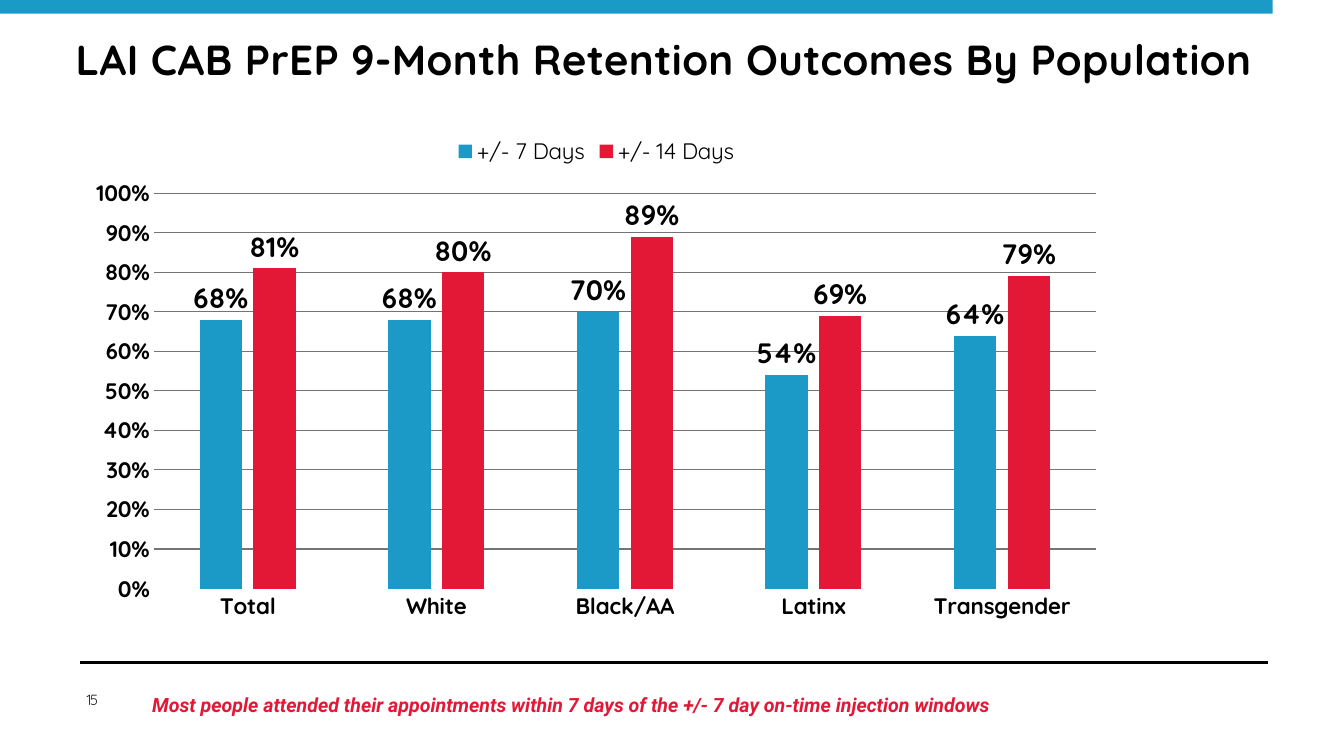
from lxml.etree import SubElement
from pptx import Presentation
from pptx.chart.data import CategoryChartData
from pptx.dml.color import RGBColor
from pptx.enum.chart import (XL_CHART_TYPE, XL_LABEL_POSITION,
                             XL_LEGEND_POSITION, XL_TICK_MARK)
from pptx.enum.shapes import MSO_CONNECTOR, MSO_SHAPE
from pptx.enum.text import MSO_ANCHOR, MSO_AUTO_SIZE, PP_ALIGN
from pptx.oxml.ns import qn
from pptx.util import Emu, Pt

SCALE = 9525  # EMU in one px
HEX = {"bar": "1A9AC7", "blue": "1B9AC7", "red": "E31836", "black": "000000",
       "dark": "1F1F1F", "grid": "747474", "white": "FFFFFF"}
HEAD = "Quicksand"
GROUPS = ["Total", "White", "Black/AA", "Latinx", "Transgender"]
RATES = [("+/- 7 Days", "blue", [0.68, 0.68, 0.7, 0.54, 0.64]),
         ("+/- 14 Days", "red", [0.81, 0.8, 0.89, 0.69, 0.79])]


def px(*nums):
    return [Emu(n * SCALE) for n in nums]


def tint(name):
    return RGBColor.from_string(HEX[name])


def style(font, size, color="black", face=HEAD, bold=False, slant=False):
    font.size, font.name = Pt(size), face
    font.bold, font.italic = bold, slant
    font.color.rgb = tint(color)


def add_run(para, text, size, space=0, **look):
    run = para.add_run()
    run.text = text
    style(run.font, size, **look)
    if space:
        run.font._element.set("spc", str(space))


def set_frame(frame, pads, wrap=True, anchor=MSO_ANCHOR.TOP):
    frame.auto_size = MSO_AUTO_SIZE.NONE
    frame.word_wrap = wrap
    frame.vertical_anchor = anchor
    (frame.margin_left, frame.margin_top,
     frame.margin_right, frame.margin_bottom) = px(*pads)


def add_title(slide, box, text):
    title = slide.shapes.title
    title.left, title.top, title.width, title.height = px(*box)
    set_frame(title.text_frame, (0, 10, 0, 0))
    para = title.text_frame.paragraphs[0]
    para.alignment = PP_ALIGN.LEFT
    add_run(para, text, 30, space=30, bold=True)


def add_text(slide, box, text, size, pads, align=PP_ALIGN.LEFT,
             wrap=True, anchor=MSO_ANCHOR.TOP, **look):
    frame = slide.shapes.add_textbox(*px(*box)).text_frame
    set_frame(frame, pads, wrap, anchor)
    para = frame.paragraphs[0]
    para.alignment = align
    add_run(para, text, size, **look)


def add_band(slide, box, color):
    band = slide.shapes.add_shape(MSO_SHAPE.RECTANGLE, *px(*box))
    band.shadow.inherit = False
    band.fill.solid()
    band.fill.fore_color.rgb = tint(color)
    band.line.fill.background()


def add_rule(slide, ends, color, width):
    rule = slide.shapes.add_connector(MSO_CONNECTOR.STRAIGHT, *px(*ends))
    rule.line.color.rgb = tint(color)
    rule.line.width = Pt(width)
    SubElement(rule._element.spPr, qn("a:effectLst"))


def set_axes(chart):
    for axis in (chart.category_axis, chart.value_axis):
        axis.major_tick_mark = axis.minor_tick_mark = XL_TICK_MARK.NONE
        style(axis.tick_labels.font, 16, bold=True)
    chart.category_axis.format.line.color.rgb = tint("white")
    chart.category_axis.format.line.width = Pt(0.75)
    rate = chart.value_axis
    rate.minimum_scale, rate.maximum_scale, rate.major_unit = 0, 1, 0.1
    rate.tick_labels.number_format = "0%"
    rate.tick_labels.number_format_is_linked = False
    rate.format.line.fill.background()
    rate.has_major_gridlines = True
    grid = rate.major_gridlines.format.line
    grid.color.rgb, grid.width = tint("grid"), Pt(0.75)


def set_bars(chart):
    plot = chart.plots[0]
    plot.gap_width, plot.overlap = 219, -27
    plot.vary_by_categories = False
    for bars, (_, color, _) in zip(plot.series, RATES):
        bars.format.fill.solid()
        bars.format.fill.fore_color.rgb = tint(color)
        bars.invert_if_negative = False
        tags = bars.data_labels
        tags.show_value = True
        tags.number_format, tags.number_format_is_linked = "0%", False
        tags.position = XL_LABEL_POSITION.OUTSIDE_END
        style(tags.font, 20, bold=True)


def add_bars(slide, box):
    data = CategoryChartData(number_format="0%")
    data.categories = GROUPS
    for name, _, vals in RATES:
        data.add_series(name, vals)
    chart = slide.shapes.add_chart(
        XL_CHART_TYPE.COLUMN_CLUSTERED, *px(*box), data).chart
    style(chart.font, 10, face="Arial")
    chart.has_title = False
    chart.has_legend = True
    chart.legend.position = XL_LEGEND_POSITION.TOP
    chart.legend.include_in_layout = False
    style(chart.legend.font, 16)
    set_axes(chart)
    set_bars(chart)


def main():
    deck = Presentation()
    deck.slide_width, deck.slide_height = px(1280, 720)
    slide = deck.slides.add_slide(deck.slide_layouts[5])

    # Frame: top band, bottom rule, page number
    add_band(slide, (0, 0, 1212, 13), "bar")
    add_rule(slide, (76, 631, 1208, 631), "black", 2)
    add_text(slide, (76, 654, 24, 25), "15", 10.5, (0, 0, 0, 0),
             align=PP_ALIGN.CENTER, wrap=False, anchor=MSO_ANCHOR.MIDDLE,
             color="dark", space=-100)

    # Title, chart and takeaway
    add_title(slide, (72, 22, 1136, 111),
              "LAI CAB PrEP 9-Month Retention Outcomes By Population")
    add_bars(slide, (72, 120, 992, 480))
    add_text(slide, (135, 655, 917, 33),
             "Most people attended their appointments within 7 days of the "
             "+/- 7 day on-time injection windows",
             14, (10, 5, 10, 5), face="Roboto", color="red",
             bold=True, slant=True)

    deck.save("out.pptx")


if __name__ == "__main__":
    main()
